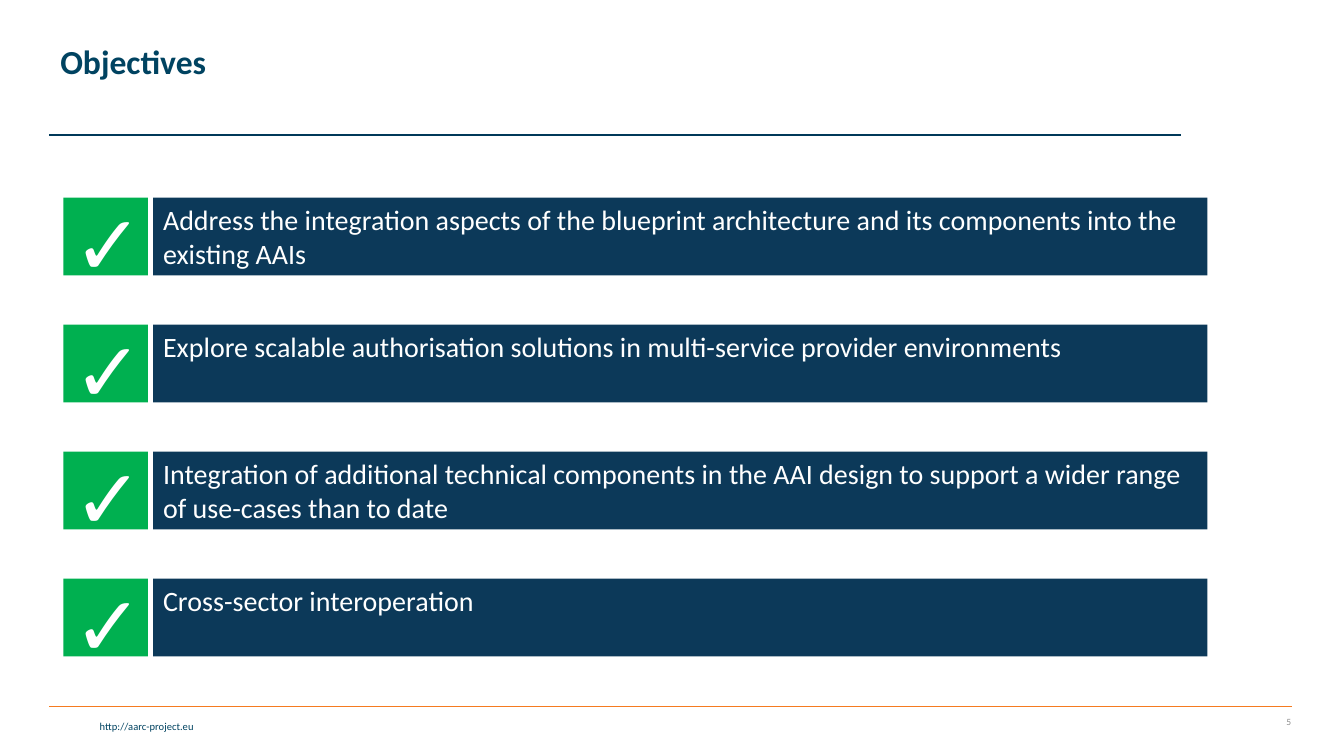
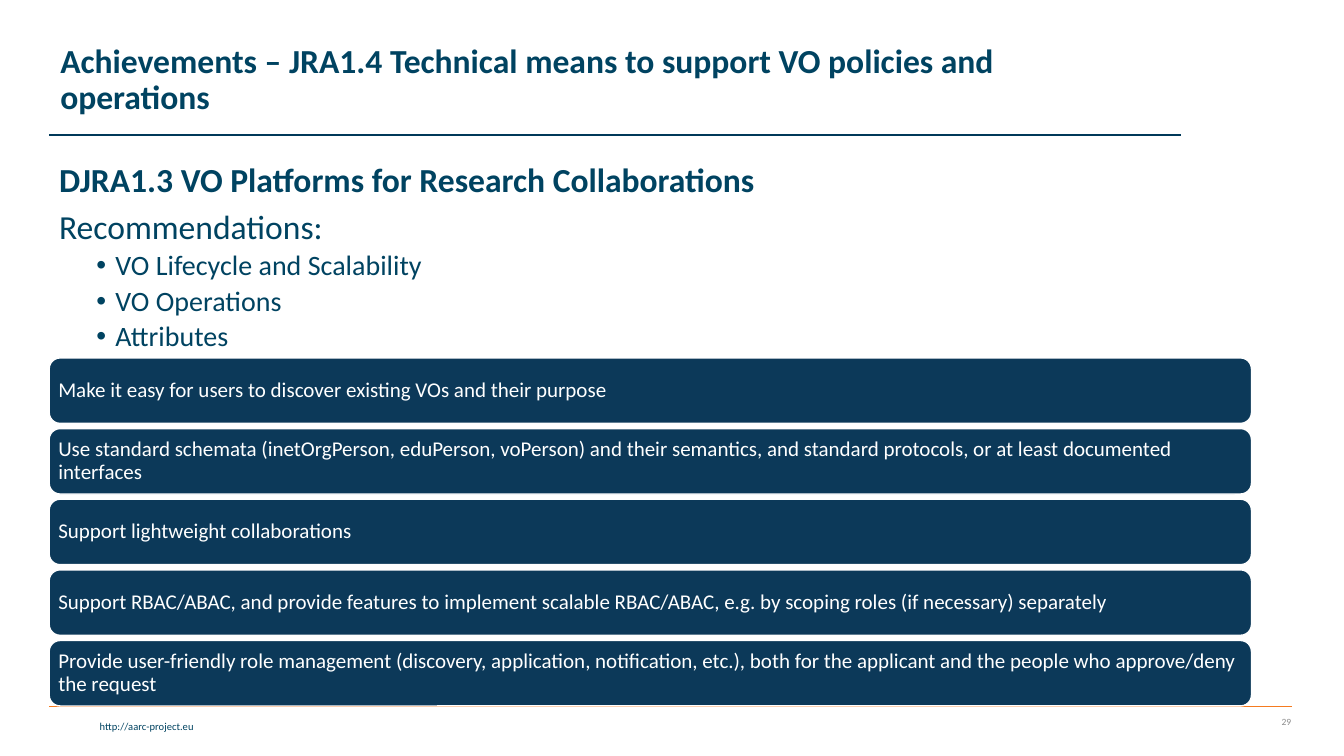
from dataclasses import dataclass

from lxml import etree
from pptx import Presentation
from pptx.dml.color import RGBColor
from pptx.enum.shapes import MSO_CONNECTOR, MSO_SHAPE
from pptx.enum.text import MSO_ANCHOR, PP_ALIGN
from pptx.oxml.ns import qn
from pptx.shapes.autoshape import Shape
from pptx.slide import Slide
from pptx.text.text import TextFrame, _Paragraph
from pptx.util import Cm, Pt

LEFT, RIGHT = PP_ALIGN.LEFT, PP_ALIGN.RIGHT
TOP, MIDDLE = MSO_ANCHOR.TOP, MSO_ANCHOR.MIDDLE
RECTANGLE, ROUNDED = MSO_SHAPE.RECTANGLE, MSO_SHAPE.ROUNDED_RECTANGLE
STRAIGHT = MSO_CONNECTOR.STRAIGHT

TEAL = "004361"
NAVY = "0C3959"
HEADER_RULE = "003959"
ORANGE = "F57B20"
GREEN = "00B050"
GREY = "8C8C8C"
WHITE = "FFFFFF"


@dataclass(frozen=True)
class Box:
    """Position and size in centimetres."""
    left: float
    top: float
    width: float
    height: float

    def lengths(self) -> tuple[Cm, Cm, Cm, Cm]:
        return Cm(self.left), Cm(self.top), Cm(self.width), Cm(self.height)


@dataclass(frozen=True)
class TextStyle:
    size: float
    color: str = TEAL
    bold: bool = False
    font: str = "Calibri"
    align: PP_ALIGN = LEFT
    line_spacing: float = 1.0
    space_before: float = 0
    bullet: bool = False


@dataclass(frozen=True)
class Line:
    text: str
    style: TextStyle


TITLE = TextStyle(24, bold=True, line_spacing=0.9)
FOOTER = TextStyle(7.5, align=RIGHT)
PAGE_NUMBER = TextStyle(6.8, GREY, align=RIGHT)
OBJECTIVE = TextStyle(20, WHITE)
CHECK = TextStyle(60, WHITE, font="Arial")
RECOMMENDATION = TextStyle(15, WHITE, line_spacing=0.9)
DELIVERABLE = TextStyle(24, bold=True, line_spacing=0.9)
INTRO = TextStyle(24, line_spacing=0.9, space_before=7.5)
TOPIC = TextStyle(20, line_spacing=0.9, space_before=3.8, bullet=True)

OBJECTIVES_TOP, OBJECTIVES_PITCH = 4.98, 3.2
OBJECTIVES = (
    "Address the integration aspects of the blueprint architecture and its "
    "components into the existing AAIs",
    "Explore scalable authorisation solutions in multi-service provider environments",
    "Integration of additional technical components in the AAI design to support "
    "a wider range of use-cases than to date",
    "Cross-sector interoperation",
)

TOPICS = (
    Line("DJRA1.3 VO Platforms for Research Collaborations", DELIVERABLE),
    Line("Recommendations:", INTRO),
    Line("VO Lifecycle and Scalability", TOPIC),
    Line("VO Operations", TOPIC),
    Line("Attributes", TOPIC),
)

CARDS_TOP, CARDS_PITCH = 9.02, 1.78
RECOMMENDATIONS = (
    "Make it easy for users to discover existing VOs and their purpose",
    "Use standard schemata (inetOrgPerson, eduPerson, voPerson) and their "
    "semantics, and standard protocols, or at least documented interfaces",
    "Support lightweight collaborations",
    "Support RBAC/ABAC, and provide features to implement scalable RBAC/ABAC, "
    "e.g. by scoping roles (if necessary) separately",
    "Provide user-friendly role management (discovery, application, notification, "
    "etc.), both for the applicant and the people who approve/deny the request",
)


def rgb(color: str) -> RGBColor:
    return RGBColor.from_string(color)


def add_bullet(paragraph: _Paragraph) -> None:
    paragraph.level = 1
    properties = paragraph._p.get_or_add_pPr()
    properties.set("marL", str(Cm(1.42)))
    properties.set("indent", str(Cm(-0.48)))
    etree.SubElement(properties, qn("a:buFont"), typeface="Arial")
    etree.SubElement(properties, qn("a:buChar"), char="•")


def write(frame: TextFrame, *lines: Line, anchor: MSO_ANCHOR = TOP) -> None:
    frame.word_wrap = True
    frame.vertical_anchor = anchor
    for index, line in enumerate(lines):
        style = line.style
        paragraph = frame.add_paragraph() if index else frame.paragraphs[0]
        if style.bullet:
            add_bullet(paragraph)
        paragraph.alignment = style.align
        paragraph.line_spacing = style.line_spacing
        if index:
            paragraph.space_before = Pt(style.space_before)
        run = paragraph.add_run()
        run.text = line.text
        run.font.name = style.font
        run.font.size = Pt(style.size)
        run.font.bold = style.bold
        run.font.color.rgb = rgb(style.color)


def add_text(slide: Slide, box: Box, *lines: Line, anchor: MSO_ANCHOR = TOP) -> None:
    write(slide.shapes.add_textbox(*box.lengths()).text_frame, *lines, anchor=anchor)


def add_panel(slide: Slide, box: Box, fill: str, kind: MSO_SHAPE = RECTANGLE) -> Shape:
    """Add a filled shape without outline or shadow."""
    panel = slide.shapes.add_shape(kind, *box.lengths())
    panel.shadow.inherit = False
    panel.fill.solid()
    panel.fill.fore_color.rgb = rgb(fill)
    panel.line.fill.background()
    return panel


def add_rule(slide: Slide, left: float, right: float, y: float, color: str) -> None:
    rule = slide.shapes.add_connector(STRAIGHT, Cm(left), Cm(y), Cm(right), Cm(y))
    rule.line.color.rgb = rgb(color)
    rule.line.width = Pt(1)
    etree.SubElement(rule._element.spPr, qn("a:effectLst"))


def add_framed_slide(deck: Presentation, title: str, title_height: float, number: int) -> Slide:
    """Add a blank slide with the shared title, rules, address and page number."""
    slide = deck.slides.add_slide(deck.slide_layouts[6])
    add_rule(slide, 1.24, 32.56, 17.81, ORANGE)
    add_text(slide, Box(0.08, 18.01, 5.05, 0.58), Line("http://aarc-project.eu", FOOTER))
    add_rule(slide, 1.24, 29.77, 3.4, HEADER_RULE)
    add_text(slide, Box(30.73, 17.81, 2.06, 0.76), Line(str(number), PAGE_NUMBER), anchor=MIDDLE)
    add_text(slide, Box(1.27, 0.2, 26.7, title_height), Line(title, TITLE), anchor=MIDDLE)
    return slide


def add_objective(slide: Slide, top: float, text: str) -> None:
    add_panel(slide, Box(1.6, top, 2.13, 1.96), GREEN)
    bar = add_panel(slide, Box(3.86, top, 26.57, 1.96), NAVY)
    write(bar.text_frame, Line(text, OBJECTIVE))
    add_text(slide, Box(1.6, top - 0.29, 1.78, 2.82), Line("✓", CHECK))


def add_recommendation(slide: Slide, top: float, text: str) -> None:
    card = add_panel(slide, Box(1.24, top, 30.3, 1.65), NAVY, ROUNDED)
    card.line.color.rgb = rgb(WHITE)
    card.line.width = Pt(1)
    frame = card.text_frame
    frame.margin_left = frame.margin_right = Cm(0.15)
    frame.margin_top = frame.margin_bottom = Cm(0.15)
    write(frame, Line(text, RECOMMENDATION), anchor=MIDDLE)


def add_objectives_slide(deck: Presentation) -> None:
    slide = add_framed_slide(deck, "Objectives", 2.82, 5)
    for row, objective in enumerate(OBJECTIVES):
        add_objective(slide, OBJECTIVES_TOP + row * OBJECTIVES_PITCH, objective)


def add_achievements_slide(deck: Presentation) -> None:
    title = "Achievements – JRA1.4 Technical means to support VO policies and operations"
    slide = add_framed_slide(deck, title, 3.68, 29)
    add_text(slide, Box(1.24, 3.99, 29.49, 5.18), *TOPICS)
    for row, recommendation in enumerate(RECOMMENDATIONS):
        add_recommendation(slide, CARDS_TOP + row * CARDS_PITCH, recommendation)


def main() -> None:
    deck = Presentation()
    deck.slide_width, deck.slide_height = Cm(33.87), Cm(19.05)
    add_objectives_slide(deck)
    add_achievements_slide(deck)
    deck.save("out.pptx")


if __name__ == "__main__":
    main()
